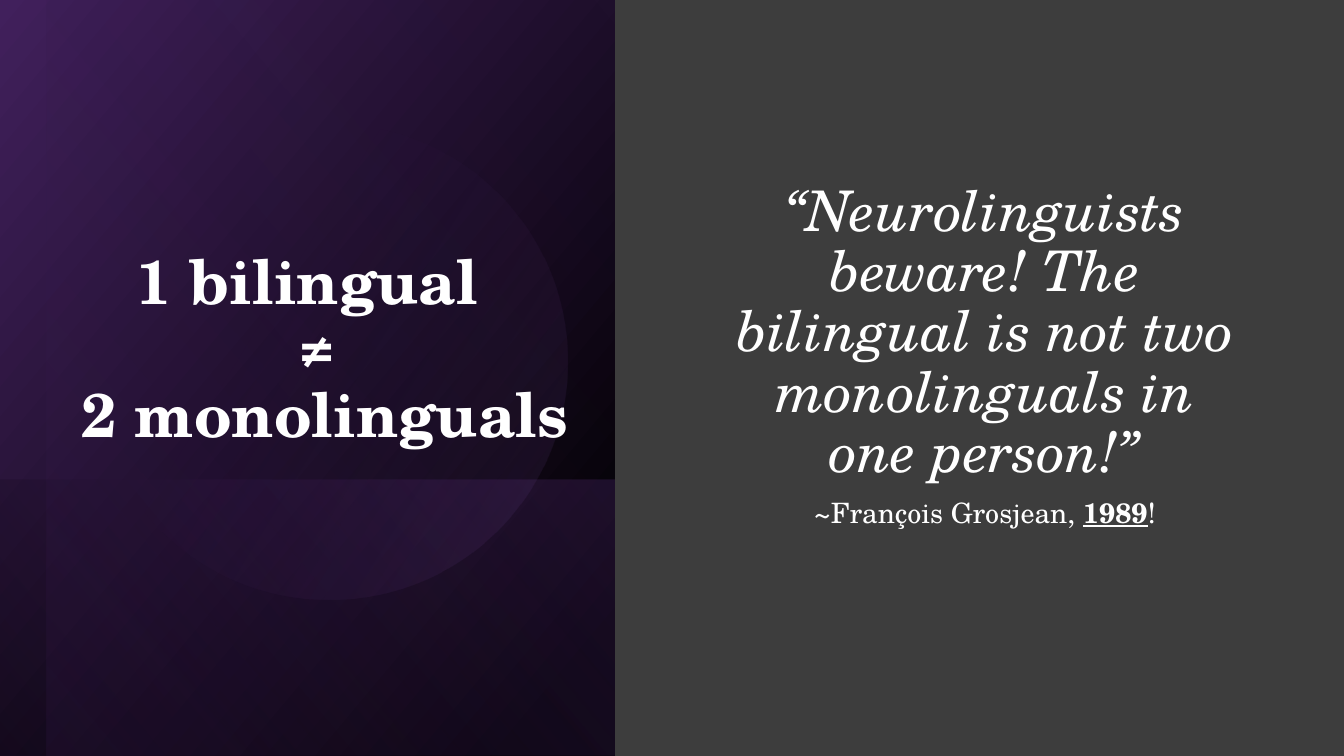
from pptx import Presentation
from pptx.dml.color import RGBColor
from pptx.enum.shapes import MSO_SHAPE
from pptx.enum.text import MSO_ANCHOR, PP_ALIGN
from pptx.oxml import parse_xml
from pptx.oxml.ns import nsdecls
from pptx.util import Pt

PX = 12192000 // 1344
WIDTH, HEIGHT = 1344, 756
SPLIT = 615

BLACK = RGBColor(0x00, 0x00, 0x00)
WHITE = RGBColor(0xFF, 0xFF, 0xFF)
CHARCOAL = RGBColor(0x3D, 0x3D, 0x3D)
DEEP_PURPLE = RGBColor(0x41, 0x20, 0x5C)
PURPLE = RGBColor(0x57, 0x2B, 0x7A)
LILAC = RGBColor(0x9D, 0x66, 0xC9)

SERIF = "TeX Gyre Schola"
SYMBOL_FONT = "Cambria"


class SlideBuilder:
    def __init__(self, page, font, color):
        self.page = page
        self.font = font
        self.color = color

    def background(self, color):
        fill = self.page.background.fill
        fill.solid()
        fill.fore_color.rgb = color

    def gradient_shape(self, kind, left, top, width, height, stops, angle):
        """Stops are (position %, color, opacity %)."""
        shape = self.page.shapes.add_shape(
            kind, *(round(n * PX) for n in (left, top, width, height)))
        shape.shadow.inherit = False
        shape.line.fill.background()
        stop_xml = "".join(
            f'<a:gs pos="{position * 1000}"><a:srgbClr val="{color}">'
            f'<a:alpha val="{opacity * 1000}"/></a:srgbClr></a:gs>'
            for position, color, opacity in stops)
        shape._element.spPr.insert(2, parse_xml(
            f'<a:gradFill rotWithShape="1" {nsdecls("a")}><a:gsLst>{stop_xml}</a:gsLst>'
            f'<a:lin ang="{angle * 60000}" scaled="0"/></a:gradFill>'))
        return shape

    def turned_panel(self, left, top, width, height, stops, angle):
        """Mirrored rectangle, turned 90 degrees, that covers the given area."""
        shift = (width - height) / 2
        panel = self.gradient_shape(MSO_SHAPE.RECTANGLE, left + shift, top - shift,
                                    height, width, stops, angle)
        panel.rotation = 90
        panel._element.spPr.xfrm.set("flipH", "1")

    def text_box(self, left, top, width, height):
        box = self.page.shapes.add_textbox(*(n * PX for n in (left, top, width, height)))
        frame = box.text_frame
        frame.word_wrap = True
        frame.vertical_anchor = MSO_ANCHOR.MIDDLE
        return frame

    def style(self, para, size, space_before=0, bold=False, italic=False):
        para.alignment = PP_ALIGN.CENTER
        para.line_spacing = 0.9
        para.space_before = Pt(space_before)
        font = para.font
        font.name, font.size = self.font, Pt(size)
        font.bold, font.italic = bold, italic
        font.color.rgb = self.color

    def span(self, para, text):
        span = para.add_run()
        span.text = text
        # Fonts of the runs repeat the paragraph, which not every viewer inherits
        source = para.font
        font = span.font
        font.name, font.size = source.name, source.size
        font.bold, font.italic = source.bold, source.italic
        font.color.rgb = self.color
        return span


def main():
    deck = Presentation()
    deck.slide_width, deck.slide_height = WIDTH * PX, HEIGHT * PX
    deck.slide_width = 12192000
    deck.slide_height = 6858000
    page = deck.slides.add_slide(deck.slide_layouts[6])
    slide = SlideBuilder(page, SERIF, WHITE)
    slide.background(CHARCOAL)

    # Purple left side: base, lower band, inner glow, disc
    slide.turned_panel(0, 0, SPLIT, HEIGHT,
                       [(8, BLACK, 100), (100, DEEP_PURPLE, 100)], 50)
    slide.turned_panel(0, 480, SPLIT, HEIGHT - 480,
                       [(2, PURPLE, 29), (100, BLACK, 30)], 130)
    slide.turned_panel(47, 0, SPLIT - 47, HEIGHT,
                       [(0, BLACK, 0), (99, PURPLE, 11)], 130)
    disc = slide.gradient_shape(MSO_SHAPE.OVAL, 91, 124, 476, 476,
                                [(39, PURPLE, 0), (100, LILAC, 15)], 290)
    disc.rotation = 101.6

    # Title
    title = slide.text_box(50, 154, 533, 394).paragraphs[0]
    slide.style(title, 44, bold=True)
    slide.span(title, "1 bilingual ")
    title.add_line_break()
    slide.span(title, "≠").font.name = SYMBOL_FONT
    title.add_line_break()
    slide.span(title, " 2 monolinguals")

    # Quotation and its author
    body = slide.text_box(717, 72, 536, 568)
    quote = body.paragraphs[0]
    slide.style(quote, 40, space_before=10, italic=True)
    slide.span(quote, "“Neurolinguists beware! The bilingual is not two "
                      "monolinguals in one person!”")
    author = body.add_paragraph()
    slide.style(author, 20, space_before=10)
    slide.span(author, "~François Grosjean, ")
    year = slide.span(author, "1989")
    year.font.bold = year.font.underline = True
    slide.span(author, "!")

    deck.save("out.pptx")


if __name__ == "__main__":
    main()
